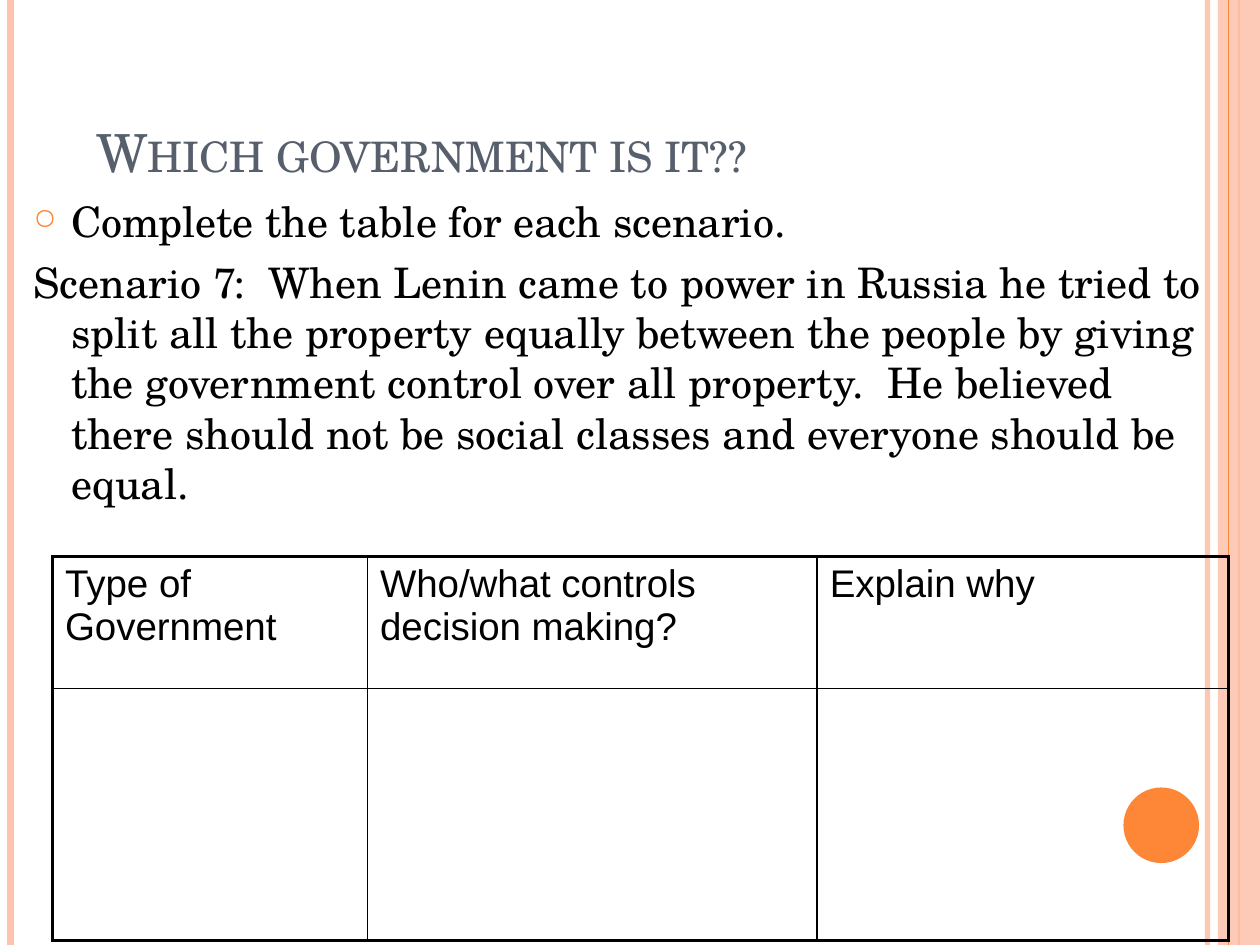
from pptx import Presentation
from pptx.dml.color import RGBColor
from pptx.enum import shapes, text
from pptx.oxml import parse_xml
from pptx.oxml.ns import nsdecls, qn
from pptx.util import Pt
from lxml import etree

PEACH = RGBColor(0xFE, 0xC3, 0xAE)
ORANGE = RGBColor(0xFE, 0x86, 0x37)
SLATE = RGBColor(0x57, 0x5F, 0x6D)
BLACK = RGBColor(0, 0, 0)
WIDTH, HEIGHT = 720, 540
SERIF, SANS = "TeX Gyre Schola", "Arial"

TITLE = "Which government is it??"
TASK = "Complete the table for each scenario."
SCENARIO = (
    "Scenario 7:  When Lenin came to power in Russia he tried to split all the "
    "property equally between the people by giving the government control over "
    "all property.  He believed there should not be social classes and everyone "
    "should be equal."
)
HEADERS = ["Type of Government", "Who/what controls decision making?", "Explain why"]
COL_WIDTHS = [180, 257, 235]
ROW_HEIGHTS = [75.6, 144]
OUTER, INNER = 2.25, 1

# x, colour, width, opacity in percent
LEFT_STRIPES = [(690, PEACH, 3, 93), (6, PEACH, 4.5, 100), (708, ORANGE, 1.5, 100)]
EDGE_STRIPE = (702, ORANGE, 0.75, 100)
BAND = (696, 0, 24, HEIGHT)
DOT = (642, 450, 43.2, 43.2)


def set_alpha(element, percent):
    if percent < 100:
        clr = element.find(".//" + qn("a:srgbClr"))
        etree.SubElement(clr, qn("a:alpha")).set("val", str(percent * 1000))


def add_stripe(x, color, width, opacity):
    c = s.shapes.add_connector(shapes.MSO_CONNECTOR.STRAIGHT, Pt(x), 0, Pt(x), Pt(HEIGHT))
    c.line.color.rgb = color
    c.line.width = Pt(width)
    spPr = c._element.spPr
    set_alpha(spPr, opacity)
    etree.SubElement(spPr, qn("a:effectLst"))


def add_solid(kind, box, color, opacity=100):
    sp = s.shapes.add_shape(kind, *map(Pt, box))
    sp.shadow.inherit = False
    sp.fill.solid()
    sp.fill.fore_color.rgb = color
    sp.line.fill.background()
    set_alpha(sp._element.spPr, opacity)


def add_frame(box, anchor):
    tf = s.shapes.add_textbox(*map(Pt, box)).text_frame
    tf.word_wrap = True
    tf.vertical_anchor = anchor
    return tf


def add_text(p, words, name, size, color):
    r = p.add_run()
    r.text = words
    for key, value in {"name": name, "size": Pt(size)}.items():
        setattr(r.font, key, value)
    r.font.color.rgb = color
    return r


def hang(p, bullet=None):
    """Give a hanging indent, with a bullet if one is named."""
    p.space_before = Pt(6)
    pPr = p._p.get_or_add_pPr()
    pPr.set("marL", str(Pt(21.6)))
    pPr.set("indent", str(-Pt(21.6)))
    if bullet:
        for xml in (f'<a:buClr {nsdecls("a")}><a:srgbClr val="{ORANGE}"/></a:buClr>',
                    f'<a:buSzPct {nsdecls("a")} val="70000"/>',
                    f'<a:buChar {nsdecls("a")} char="{bullet}"/>'):
            pPr.append(parse_xml(xml))


def set_borders(cell, widths):
    tcPr = cell._tc.get_or_add_tcPr()
    for i, (side, width) in enumerate(widths.items()):
        tcPr.insert(i, parse_xml(
            f'<a:{side} {nsdecls("a")} w="{Pt(width)}"><a:solidFill>'
            f'<a:srgbClr val="{BLACK}"/></a:solidFill></a:{side}>'))


prs = Presentation()
prs.slide_width, prs.slide_height = Pt(WIDTH), Pt(HEIGHT)
s = prs.slides.add_slide(prs.slide_layouts[6])

for stripe in LEFT_STRIPES:
    add_stripe(*stripe)
add_solid(shapes.MSO_SHAPE.RECTANGLE, BAND, PEACH, 87)
add_stripe(*EDGE_STRIPE)
add_solid(shapes.MSO_SHAPE.OVAL, DOT, ORANGE)

tf = add_frame((48, 18, 612, 90), text.MSO_ANCHOR.BOTTOM)
r = add_text(tf.paragraphs[0], TITLE, SERIF, 30, SLATE)
r._r.get_or_add_rPr().set("cap", "small")

tf = add_frame((12, 108, 690, 180), text.MSO_ANCHOR.TOP)
for p, words, bullet in ((tf.paragraphs[0], TASK, "○"), (tf.add_paragraph(), SCENARIO, None)):
    hang(p, bullet)
    add_text(p, words, SERIF, 24, BLACK)

rows, cols = len(ROW_HEIGHTS), len(COL_WIDTHS)
table = s.shapes.add_table(rows, cols, Pt(30), Pt(318), Pt(sum(COL_WIDTHS)),
                           Pt(sum(ROW_HEIGHTS))).table
table.first_row = table.horz_banding = False
for col, width in zip(table.columns, COL_WIDTHS):
    col.width = Pt(width)
for i, height in enumerate(ROW_HEIGHTS):
    table.rows[i].height = Pt(height)
    for j in range(cols):
        cell = table.cell(i, j)
        cell.fill.background()
        set_borders(cell, {
            "lnL": OUTER if j == 0 else INNER,
            "lnR": OUTER if j == cols - 1 else INNER,
            "lnT": OUTER if i == 0 else INNER,
            "lnB": OUTER if i == rows - 1 else INNER,
        })
for j, header in enumerate(HEADERS):
    add_text(table.cell(0, j).text_frame.paragraphs[0], header, SANS, 22, BLACK)

prs.save("out.pptx")
